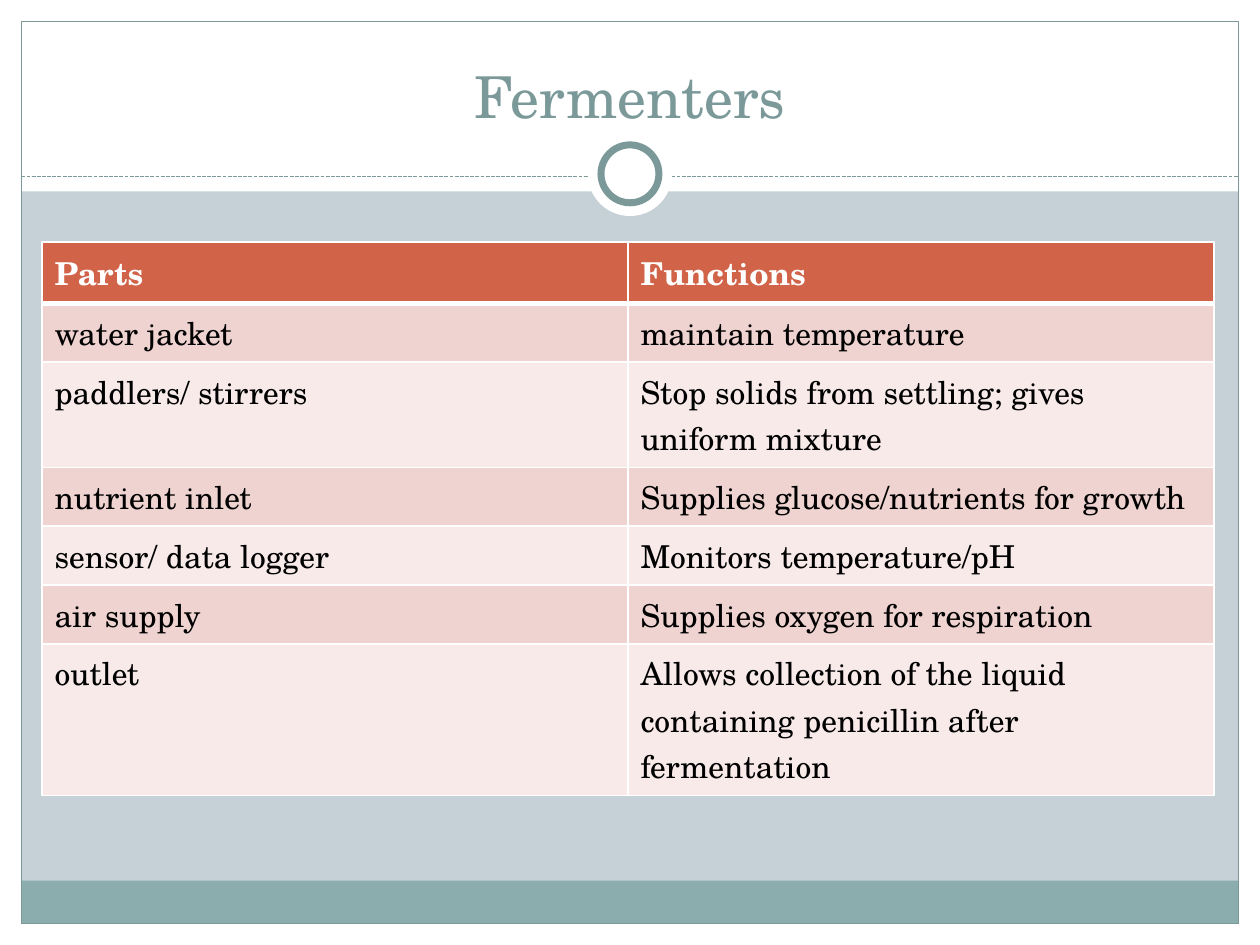
from lxml.etree import SubElement
from pptx import Presentation
from pptx.dml.color import RGBColor
from pptx.enum.dml import MSO_LINE
from pptx.enum.shapes import MSO_CONNECTOR, MSO_SHAPE
from pptx.enum.text import MSO_ANCHOR as Anchor, PP_ALIGN as Align
from pptx.oxml.ns import qn
from pptx.util import Inches, Pt

WIDTH, HEIGHT = Inches(10), Inches(7.5)
MARGIN = Inches(0.17)
FONT = "TeX Gyre Schola"
WHITE = RGBColor(0xFF, 0xFF, 0xFF)
BLACK = RGBColor(0, 0, 0)
MIST = RGBColor(0xC5, 0xD1, 0xD7)
TEAL = RGBColor(0x7C, 0x99, 0x9A)
SEA = RGBColor(0x8C, 0xAD, 0xAE)
RUST = RGBColor(0xD1, 0x63, 0x49)
ROSE = RGBColor(0xEE, 0xD3, 0xD0)
BLUSH = RGBColor(0xF7, 0xEA, 0xE9)

FERMENTER_PARTS = [
    ("Parts", "Functions"),
    ("water jacket", "maintain temperature"),
    ("paddlers/ stirrers", "Stop solids from settling; gives uniform mixture"),
    ("nutrient inlet", "Supplies glucose/nutrients for growth"),
    ("sensor/ data logger", "Monitors temperature/pH"),
    ("air supply", "Supplies oxygen for respiration"),
    ("outlet", "Allows collection of the liquid containing penicillin after fermentation"),
]


def write(frame, text, size=18, color=BLACK, bold=False, align=Align.LEFT):
    paragraph = frame.paragraphs[0]
    paragraph.alignment = align
    run = paragraph.add_run()
    run.text = text
    run.font.name = FONT
    run.font.size = Pt(size)
    run.font.bold = bold
    run.font.color.rgb = color


def add_block(slide, kind, box, fill=None, line=None, weight=0.75):
    block = slide.shapes.add_shape(kind, *box)
    block.shadow.inherit = False
    if fill is None:
        block.fill.background()
    else:
        block.fill.solid()
        block.fill.fore_color.rgb = fill
    if line is None:
        block.line.fill.background()
    else:
        block.line.color.rgb = line
        block.line.width = Pt(weight)


def draw_frame(slide, box):
    left, top, width, height = box
    right, bottom = left + width, top + height
    inner_width, inner_height = width - 2 * MARGIN, height - 2 * MARGIN
    footer = Inches(0.34)
    rect = MSO_SHAPE.RECTANGLE
    for band in (
        (left, bottom - MARGIN, width, MARGIN),
        (left, top, width, Inches(1.52)),
        (left, top, MARGIN, height),
        (right - MARGIN, top, MARGIN, height),
    ):
        add_block(slide, rect, band, fill=WHITE)
    add_block(slide, rect, (left + MARGIN, bottom - MARGIN - footer, inner_width, footer), fill=SEA)
    add_block(slide, rect, (left + MARGIN, top + MARGIN, inner_width, inner_height), line=TEAL)


def draw_divider(slide, box):
    left, top, width, height = box
    line_y = top + height // 2
    divider = slide.shapes.add_connector(
        MSO_CONNECTOR.STRAIGHT, left, line_y, left + width, line_y)
    divider.line.color.rgb = TEAL
    divider.line.width = Pt(0.75)
    divider.line.dash_style = MSO_LINE.SQUARE_DOT
    SubElement(divider._element.spPr, qn("a:effectLst"))

    center_x, center_y = left + width // 2, line_y - Inches(0.02)
    for diameter, line in ((Inches(0.67), None), (Inches(0.46), TEAL)):
        ring = (center_x - diameter // 2, center_y - diameter // 2, diameter, diameter)
        add_block(slide, MSO_SHAPE.OVAL, ring, fill=WHITE, line=line, weight=4)


def place_title(slide, box, text):
    title = slide.shapes.title
    title.left, title.top, title.width, title.height = box
    title.text_frame.vertical_anchor = Anchor.BOTTOM
    title.text_frame.word_wrap = True
    write(title.text_frame, text, size=33, color=TEAL, align=Align.CENTER)
    tree = title.element.getparent()
    tree.append(title.element)


def set_borders(cell, top=1, bottom=1):
    properties = cell._tc.get_or_add_tcPr()
    for side, weight in (("L", 1), ("R", 1), ("T", top), ("B", bottom)):
        border = SubElement(properties, qn(f"a:ln{side}"), w=str(Pt(weight)))
        fill = SubElement(border, qn("a:solidFill"))
        SubElement(fill, qn("a:srgbClr"), val=str(WHITE))


def place_table(slide, box, rows):
    left, top, width, height = box
    columns = len(rows[0])
    table = slide.shapes.add_table(len(rows), columns, left, top, width, height).table
    for column in table.columns:
        column.width = width // columns
    for r, texts in enumerate(rows):
        header = r == 0
        table.rows[r].height = height // len(rows)
        for c, text in enumerate(texts):
            cell = table.cell(r, c)
            set_borders(cell, top=3 if r == 1 else 1, bottom=3 if header else 1)
            cell.fill.solid()
            cell.fill.fore_color.rgb = RUST if header else ROSE if r % 2 else BLUSH
            write(cell.text_frame, text, color=WHITE if header else BLACK, bold=header)


def main():
    deck = Presentation()
    deck.slide_width, deck.slide_height = WIDTH, HEIGHT
    slide = deck.slides.add_slide(deck.slide_layouts[5])
    slide.background.fill.solid()
    slide.background.fill.fore_color.rgb = MIST

    draw_frame(slide, (0, 0, WIDTH, HEIGHT))
    draw_divider(slide, (MARGIN, Inches(1.05), WIDTH - 2 * MARGIN, Inches(0.7)))
    side = WIDTH // 30
    place_title(slide, (side, HEIGHT // 30, WIDTH - 2 * side, HEIGHT // 9), "Fermenters")
    place_table(slide, (side, Inches(1.92), Inches(9.3), Inches(2.87)), FERMENTER_PARTS)
    deck.save("out.pptx")


if __name__ == "__main__":
    main()
